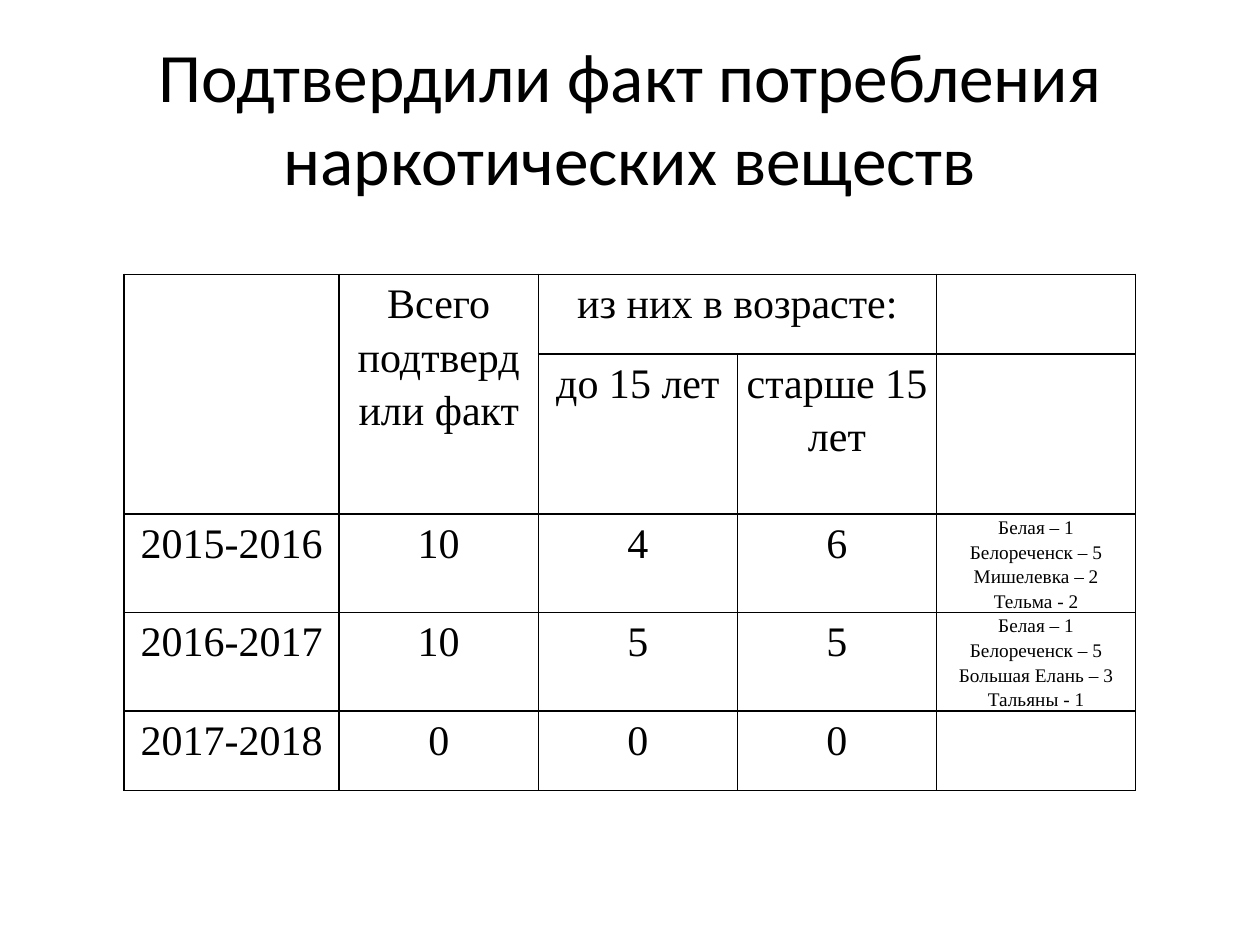
from lxml import etree
from pptx import Presentation
from pptx.dml.color import RGBColor
from pptx.enum.text import MSO_ANCHOR, MSO_AUTO_SIZE, PP_ALIGN
from pptx.oxml import parse_xml
from pptx.util import Pt

CENTER = PP_ALIGN.CENTER
MIDDLE = MSO_ANCHOR.MIDDLE
NO_AUTOFIT = MSO_AUTO_SIZE.NONE
BLACK = "000000"
DRAWING_NS = "http://schemas.openxmlformats.org/drawingml/2006/main"


def format_paragraph(paragraph, font_name, size):
    paragraph.alignment = CENTER
    paragraph.font.name = font_name
    paragraph.font.size = Pt(size)
    paragraph.font.color.rgb = RGBColor.from_string(BLACK)


def add_borders(cell, width):
    properties = cell._tc.get_or_add_tcPr()
    # Border lines must come before the fill, in this order
    for position, side in enumerate(("lnL", "lnR", "lnT", "lnB")):
        border = parse_xml(
            f'<a:{side} xmlns:a="{DRAWING_NS}" w="{Pt(width)}"/>')
        fill = etree.SubElement(border, f"{{{DRAWING_NS}}}solidFill")
        etree.SubElement(fill, f"{{{DRAWING_NS}}}srgbClr", val=BLACK)
        properties.insert(position, border)


prs = Presentation()
prs.slide_width = Pt(720)
prs.slide_height = Pt(540)
slide = prs.slides.add_slide(prs.slide_layouts[5])

# Title
title = slide.shapes.title
title.left, title.top, title.width, title.height = Pt(36), Pt(21.6), Pt(648), Pt(90)
title.text_frame.text = "Подтвердили факт потребления наркотических веществ"
title.text_frame.auto_size = NO_AUTOFIT
title.text_frame.vertical_anchor = MIDDLE
format_paragraph(title.text_frame.paragraphs[0], "Calibri", 39.6)

# Confirmed cases by school year, age and settlement
rows = [
    ["", "Всего подтвердили факт", "из них в возрасте:", "", ""],
    ["", "", "до 15 лет", "старше 15 лет", ""],
    ["2015-2016", "10", "4", "6",
     "Белая – 1\nБелореченск – 5 Мишелевка – 2\nТельма - 2"],
    ["2016-2017", "10", "5", "5",
     "Белая – 1\nБелореченск – 5\nБольшая Елань – 3\nТальяны - 1"],
    ["2017-2018", "0", "0", "0", ""],
]
column_widths = [123, 113.8, 113.8, 113.8, 113.8]
row_heights = [45.4, 91, 45.4, 45.4, 45.4]
settlement_column = 4

table = slide.shapes.add_table(
    len(rows), len(column_widths), Pt(70.8), Pt(156.8),
    Pt(sum(column_widths)), Pt(sum(row_heights))).table
table.first_row = False
table.horz_banding = False
for column, width in zip(table.columns, column_widths):
    column.width = Pt(width)
for row, height in zip(table.rows, row_heights):
    row.height = Pt(height)

for row_index, row_texts in enumerate(rows):
    for column_index, text in enumerate(row_texts):
        cell = table.cell(row_index, column_index)
        cell.fill.background()
        add_borders(cell, 1)
        cell.margin_left = cell.margin_right = Pt(5)
        cell.margin_top = cell.margin_bottom = Pt(0)
        if text:
            cell.text = text
            size = 11 if column_index == settlement_column else 24
            for paragraph in cell.text_frame.paragraphs:
                format_paragraph(paragraph, "Times New Roman", size)
                paragraph.line_spacing = 1.15

table.cell(0, 0).merge(table.cell(1, 0))
table.cell(0, 1).merge(table.cell(1, 1))
table.cell(0, 2).merge(table.cell(0, 3))

prs.save("out.pptx")
